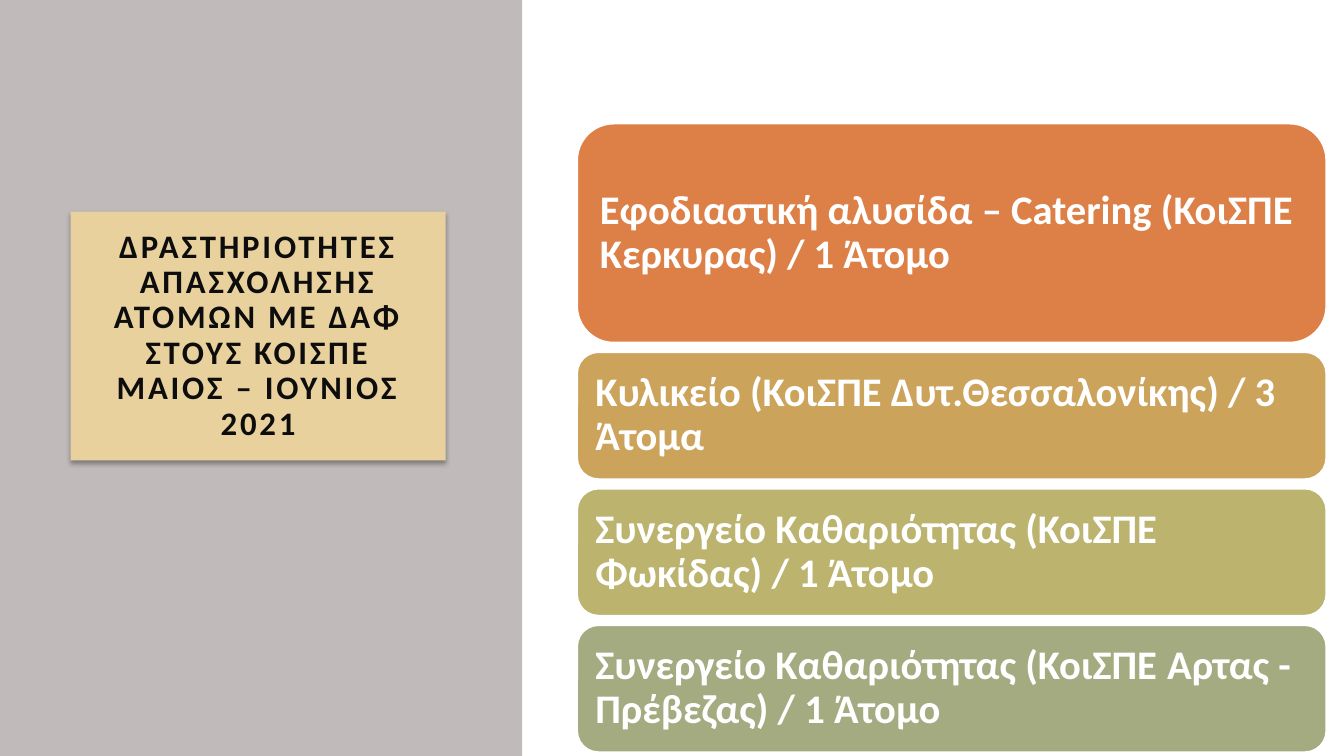
from lxml import etree
from pptx import Presentation
from pptx.dml.color import RGBColor
from pptx.enum import shapes, text
from pptx.oxml import ns
from pptx.util import Cm, Pt

BLACK = RGBColor(0x0D, 0x0D, 0x0D)
WHITE = RGBColor(0xFF, 0xFF, 0xFF)
GREY = RGBColor(0xC0, 0xBA, 0xBA)
SAND = RGBColor(0xE8, 0xD1, 0x9D)
ORANGE = RGBColor(0xDD, 0x80, 0x47)
OCHRE = RGBColor(0xCC, 0xA3, 0x5B)
OLIVE = RGBColor(0xBB, 0xB3, 0x6E)
SAGE = RGBColor(0xA5, 0xAB, 0x81)

# Content
TITLE = "ΔΡΑΣΤΗΡΙΟΤΗΤΕΣ ΑΠΑΣΧΟΛΗΣΗΣ ΑΤΟΜΩΝ ΜΕ ΔΑΦ ΣΤΟΥΣ ΚΟΙΣΠΕ ΜΑΙΟΣ – ΙΟΥΝΙΟΣ 2021"
ACTIVITIES = [  # text, fill, height in cm
    ("Εφοδιαστική αλυσίδα – Catering (ΚοιΣΠΕ Κερκυρας) / 1 Άτομο", ORANGE, 5.51),
    ("Κυλικείο (ΚοιΣΠΕ Δυτ.Θεσσαλονίκης) / 3 Άτομα", OCHRE, 3.19),
    ("Συνεργείο Καθαριότητας (ΚοιΣΠΕ Φωκίδας) / 1 Άτομο", OLIVE, 3.19),
    ("Συνεργείο Καθαριότητας (ΚοιΣΠΕ Άρτας - Πρέβεζας) / 1 Άτομο", SAGE, 3.19),
]
PANELS = [(0, 13.16, GREY), (13.21, 20.66, WHITE)]  # left, width, fill
BAR_LEFT, BAR_TOP, BAR_WIDTH, BAR_GAP = 14.55, 3.12, 18.87, 0.25


def write(box, words, *, size, color, align, inset, spacing=0):
    frame = box.text_frame
    frame.word_wrap = True
    frame.auto_size = text.MSO_AUTO_SIZE.NONE
    frame.vertical_anchor = text.MSO_ANCHOR.MIDDLE
    frame.margin_left = frame.margin_right = Cm(inset)
    frame.margin_top = frame.margin_bottom = Cm(inset)
    para = frame.paragraphs[0]
    para.alignment = align
    para.line_spacing = 0.9
    para.space_before = Pt(0)
    span = para.add_run()
    span.text = words
    span.font.name = "Calibri"
    span.font.size = Pt(size)
    span.font.bold = True
    span.font.color.rgb = color
    if spacing:
        span.font._element.set("spc", str(spacing * 100))


def add_box(page, kind, left, top, width, height, fill):
    box = page.shapes.add_shape(kind, Cm(left), Cm(top), Cm(width), Cm(height))
    box.shadow.inherit = False
    box.fill.solid()
    box.fill.fore_color.rgb = fill
    box.line.fill.background()
    return box


def add_shadow(box):
    effects = etree.SubElement(box.element.spPr, ns.qn("a:effectLst"))
    shadow = etree.SubElement(
        effects, ns.qn("a:outerShdw"), blurRad=str(Pt(3.5)), dist=str(Pt(2.2)),
        dir="5400000", algn="ctr", rotWithShape="0")
    color = etree.SubElement(shadow, ns.qn("a:srgbClr"), val="000000")
    etree.SubElement(color, ns.qn("a:alpha"), val="32000")


def main():
    deck = Presentation()
    deck.slide_width, deck.slide_height = Cm(33.87), Cm(19.05)
    page = deck.slides.add_slide(deck.slide_layouts[5])

    # Background panels
    for left, width, fill in PANELS:
        add_box(page, shapes.MSO_SHAPE.RECTANGLE, left, 0, width, 19.05, fill)

    # Title card, raised above the panels
    title = page.shapes.title
    title.element.getparent().append(title.element)
    title.left, title.top, title.width, title.height = Cm(1.78), Cm(5.33), Cm(9.45), Cm(6.27)
    title.fill.solid()
    title.fill.fore_color.rgb = SAND
    add_shadow(title)
    write(title, TITLE, size=23.4, color=BLACK, align=text.PP_ALIGN.CENTER,
          inset=0.51, spacing=2)

    # Stack of activities
    top = BAR_TOP
    for words, fill, height in ACTIVITIES:
        bar = add_box(page, shapes.MSO_SHAPE.ROUNDED_RECTANGLE,
                      BAR_LEFT, top, BAR_WIDTH, height, fill)
        bar.line.color.rgb = WHITE
        bar.line.width = Pt(1)
        write(bar, words, size=29, color=WHITE, align=text.PP_ALIGN.LEFT, inset=0.3)
        top += height + BAR_GAP

    deck.save("out.pptx")


if __name__ == "__main__":
    main()
